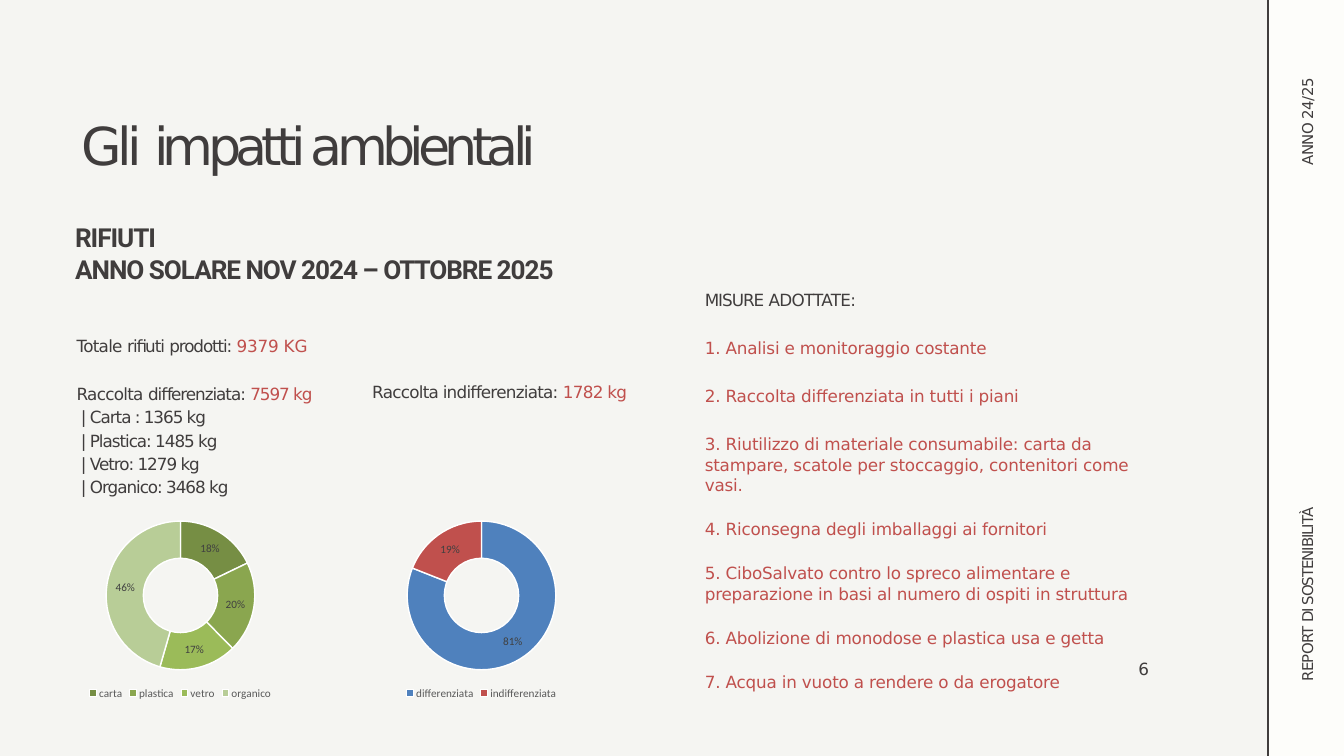
from lxml import etree
from pptx import Presentation
from pptx.chart.data import CategoryChartData
from pptx.dml.color import RGBColor
from pptx.enum.chart import XL_CHART_TYPE, XL_LEGEND_POSITION
from pptx.enum.shapes import MSO_CONNECTOR, MSO_SHAPE
from pptx.oxml.ns import qn
from pptx.util import Cm, Pt

DOUGHNUT = XL_CHART_TYPE.DOUGHNUT
BOTTOM = XL_LEGEND_POSITION.BOTTOM
STRAIGHT = MSO_CONNECTOR.STRAIGHT
RECTANGLE = MSO_SHAPE.RECTANGLE

COLORS = {
    "page": "F5F5F2", "panel": "FDFDFA", "dark": "403D3D", "red": "C0504D",
    "blue": "4F81BD", "legend": "595959", "label": "404040", "white": "FFFFFF",
    "green1": "768E44", "green2": "8AA64F", "green3": "9BBB59", "green4": "B8CD97",
}


def rgb(name):
    return RGBColor.from_string(COLORS[name])


def add_text(box, paragraphs, size=18, font="DejaVu Sans", bold=False, vert=None):
    """Each paragraph is (format dict, runs); each run is (text, colour, tracking in pt)."""
    tf = s.shapes.add_textbox(*map(Cm, box)).text_frame
    tf.word_wrap = True
    for side in ("left", "top", "right", "bottom"):
        setattr(tf, f"margin_{side}", 0)
    if vert:
        tf._txBody.bodyPr.set("vert", vert)
    for i, (formats, runs) in enumerate(paragraphs):
        p = tf.add_paragraph() if i else tf.paragraphs[0]
        for key, value in formats.items():
            if key == "indent":
                p._p.get_or_add_pPr().set("marL", str(value))
            else:
                setattr(p, key, value)
        for text, color, tracking in runs:
            r = p.add_run()
            r.text = text
            for key, value in {"name": font, "size": Pt(size), "bold": bold}.items():
                setattr(r.font, key, value)
            r.font.color.rgb = rgb(color)
            r._r.get_or_add_rPr().set("spc", str(round(tracking * 100)))


prs = Presentation()
prs.slide_width, prs.slide_height = Cm(50.8), Cm(28.58)
s = prs.slides.add_slide(prs.slide_layouts[6])
s.background.fill.solid()
s.background.fill.fore_color.rgb = rgb("page")

# Side panel
panel = s.shapes.add_shape(RECTANGLE, Cm(47.93), 0, Cm(2.87), Cm(28.58))
panel.shadow.inherit = False
panel.fill.solid()
panel.fill.fore_color.rgb = rgb("panel")
panel.line.fill.background()
edge = s.shapes.add_connector(STRAIGHT, Cm(47.93), Cm(28.58), Cm(47.93), 0)
edge.line.color.rgb = rgb("dark")
edge.line.width = Pt(1.5)
etree.SubElement(edge._element.spPr, qn("a:effectLst"))

add_text((49.07, 2.82, 0.69, 3.43), [({}, [("ANNO 24/25", "dark", -0.6)])],
         size=16, vert="vert270")
add_text((49.07, 18.72, 0.74, 7.04),
         [({}, [("REPORT ", "dark", -0.8), ("DI ", "dark", -2),
                ("SOSTENIBILITÀ", "dark", -1.1)])],
         size=16, vert="vert270")

# Headings and page number
add_text((3.1, 4.29, 35.5, 2.44),
         [({}, [("Gli ", "dark", -5), ("impatti ambientali", "dark", -6.2)])], size=56)
add_text((2.84, 8.38, 19.2, 2.44),
         [({}, [(line, "dark", -1.1)])
          for line in ("RIFIUTI", "ANNO SOLARE NOV 2024 – OTTOBRE 2025")],
         size=28, font="Roboto", bold=True)
add_text((43.03, 24.92, 0.43, 0.84), [({}, [("6", "dark", -0.7)])])

# Waste totals
spaced = {"line_spacing": 1.15}
waste = [
    (spaced, [("Totale ", "dark", -0.8), ("rifiuti ", "dark", -1.1),
              ("prodotti: ", "dark", -1.2), ("9379 KG", "red", -0.2)]),
    ({**spaced, "space_before": Pt(27)},
     [("Raccolta ", "dark", -0.8), ("differenziata: ", "dark", -1.1),
      ("7597 kg", "red", -1.1)]),
]
for item in ("Carta : 1365", "Plastica: 1485", "Vetro: 1279", "Organico: 3468"):
    waste.append(({**spaced, "indent": Cm(0.16)}, [(f"| {item} kg", "dark", -1.1)]))
add_text((2.9, 12.57, 11.63, 6.22), waste)
add_text((14.07, 14.3, 11.63, 1.75),
         [(spaced, [("Raccolta indifferenziata: ", "dark", -0.8),
                    ("1782 kg", "red", -0.8)])])

# Measures
measures = [
    "Analisi e monitoraggio costante",
    "Raccolta differenziata in tutti i piani",
    "Riutilizzo di materiale consumabile: carta da stampare, scatole per stoccaggio, "
    "contenitori come vasi.",
    "Riconsegna degli imballaggi ai fornitori",
    "CiboSalvato contro lo spreco alimentare e preparazione in basi al numero di "
    "ospiti in struttura",
    "Abolizione di monodose e plastica usa e getta",
    "Acqua in vuoto a rendere o da erogatore",
]
rows = [({}, [("MISURE ", "dark", -1.1), ("ADOTTATE:", "dark", -0.8)])]
for n, measure in enumerate(measures, 1):
    gap = Pt(30 if n <= 3 else 26)
    rows.append(({"space_before": gap}, [(f"{n}. {measure}", "red", -0.2)]))
add_text((26.64, 10.95, 17.35, 16.03), rows)

# Doughnut charts: left edge, then category, share and colour
charts = [
    (1.7, [("carta", 18, "green1"), ("plastica", 20, "green2"),
           ("vetro", 17, "green3"), ("organico", 46, "green4")]),
    (13.08, [("differenziata", 81, "blue"), ("indifferenziata", 19, "red")]),
]
for left, slices in charts:
    names, shares, fills = zip(*slices)
    data = CategoryChartData()
    data.categories = names
    data.add_series("Series 1", shares)
    chart = s.shapes.add_chart(DOUGHNUT, Cm(left), Cm(19.35), Cm(10.24), Cm(7.21),
                               data).chart
    chart.has_title = False
    chart.font.name, chart.font.size = "Calibri", Pt(10)
    chart.has_legend = True
    chart.legend.position = BOTTOM
    chart.legend.include_in_layout = False
    plot = chart.plots[0]
    plot.vary_by_categories = True
    plot._element.find(qn("c:holeSize")).set("val", "75")
    plot.has_data_labels = True
    labels = plot.data_labels
    labels.show_percentage, labels.show_value = True, False
    labels.number_format, labels.number_format_is_linked = "0%", False
    for font, color in ((chart.legend.font, "legend"), (labels.font, "label")):
        font.name, font.size = "Calibri", Pt(12)
        font.color.rgb = rgb(color)
    for i, fill in enumerate(fills):
        fmt = plot.series[0].points[i].format
        fmt.fill.solid()
        fmt.fill.fore_color.rgb = rgb(fill)
        fmt.line.color.rgb = rgb("white")
        fmt.line.width = Pt(1.5)

prs.save("out.pptx")
